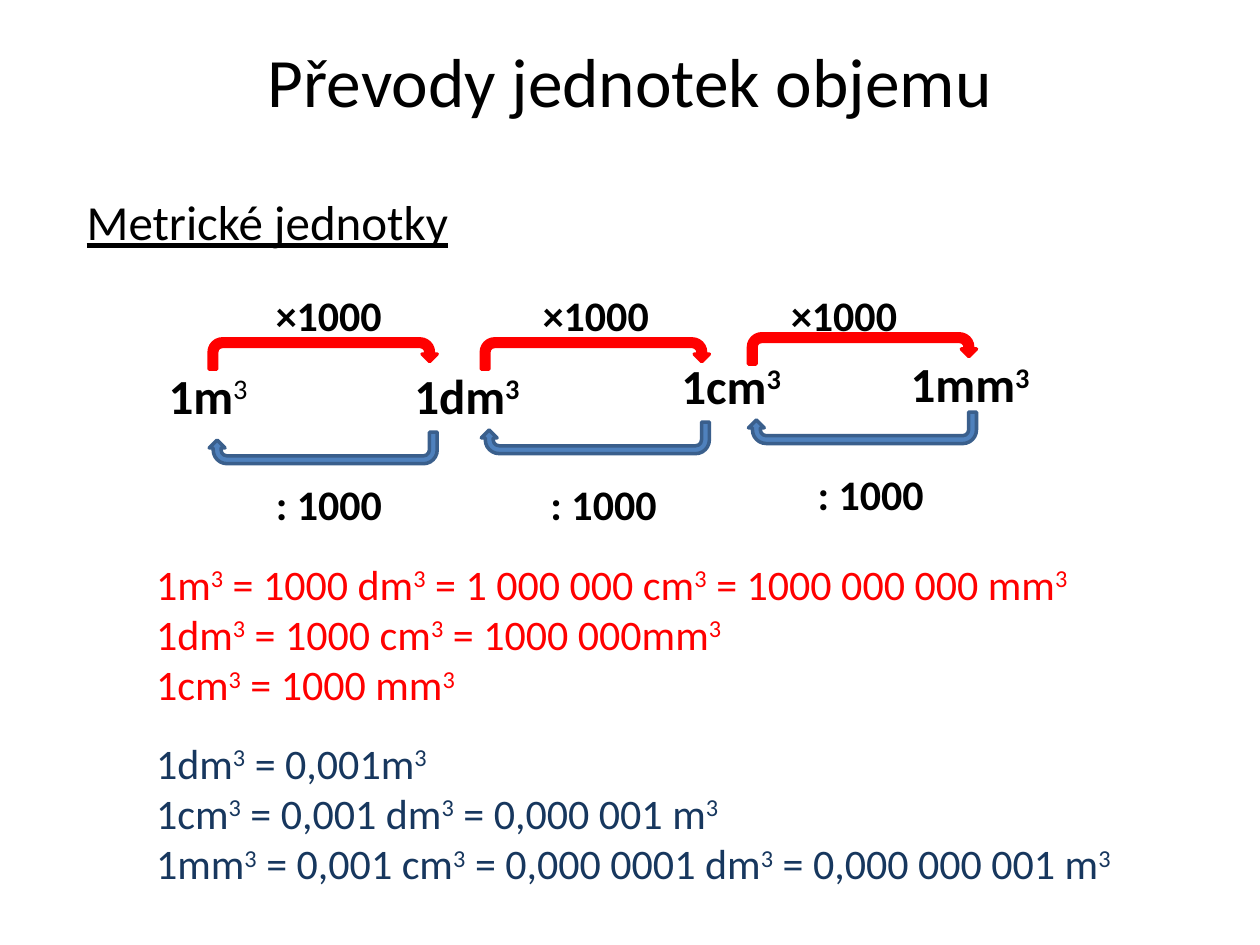
from pptx import Presentation
from pptx.dml.color import RGBColor
from pptx.enum.shapes import MSO_SHAPE as Shape
from pptx.enum.text import MSO_ANCHOR as Anchor, PP_ALIGN as Align
from pptx.util import Inches, Pt

COLORS = {
    "black": "000000",
    "red": "FF0000",
    "blue": "4F81BD",
    "blue_edge": "3A5F8C",
    "navy": "17375E",
}

# Unit, left, top, bold exponent
UNITS = [
    ("1m^3", 1.24, 2.85, 0.85, False),
    ("1dm^3", 3.19, 2.85, 1.06, True),
    ("1cm^3", 5.31, 2.77, 1.02, True),
    ("1mm^3", 7.13, 2.76, 1.16, True),
]

# Each step between neighbouring units: arrow left, then
# top of the upper arrow, top of the lower arrow,
# left of the "×" label, left and top of the ":" label
STEPS = [
    (1.66, 2.69, 3.43, 2.09, 2.09, 3.75),
    (3.82, 2.69, 3.35, 4.21, 4.27, 3.75),
    (5.94, 2.65, 3.27, 6.18, 6.39, 3.67),
]

TO_SMALLER = [
    "1m^3 = 1000 dm^3 = 1 000 000 cm^3 = 1000 000 000 mm^3",
    "1dm^3 = 1000 cm^3 = 1000 000mm^3",
    "1cm^3 = 1000 mm^3",
]
TO_LARGER = [
    "1dm^3 = 0,001m^3",
    "1cm^3 = 0,001 dm^3 = 0,000 001 m^3",
    "1mm^3 = 0,001 cm^3 = 0,000 0001 dm^3 = 0,000 000 001 m^3",
]


def rgb(name):
    return RGBColor.from_string(COLORS[name])


def write(frame, lines, size=24, color="black", bold=False,
          exponent_bold=None, underline=False, align=Align.LEFT):
    """Fill a text frame; the digit after each ^ is set as an exponent."""
    for number, line in enumerate(lines):
        paragraph = frame.paragraphs[0] if number == 0 else frame.add_paragraph()
        paragraph.alignment = align
        base, *rest = line.split("^")
        pieces = [(base, False)]
        for part in rest:
            pieces += [(part[0], True), (part[1:], False)]
        for text, raised in pieces:
            if not text:
                continue
            run = paragraph.add_run()
            run.text = text
            font = run.font
            font.name, font.size = "Calibri", Pt(size)
            font.color.rgb = rgb(color)
            font.underline = underline
            font.bold = bold
            if raised:
                run._r.get_or_add_rPr().set("baseline", "30000")
                if exponent_bold is not None:
                    font.bold = exponent_bold


def add_text(slide, lines, left, top, width, height, **text_format):
    box = slide.shapes.add_textbox(
        Inches(left), Inches(top), Inches(width), Inches(height))
    box.text_frame.word_wrap = False
    write(box.text_frame, lines, **text_format)


def add_turn_arrow(slide, left, top, height, fill, edge, rotation=0):
    arrow = slide.shapes.add_shape(
        Shape.U_TURN_ARROW, Inches(left), Inches(top), Inches(1.81), Inches(height))
    arrow.rotation = rotation
    arrow.shadow.inherit = False
    arrow.fill.solid()
    arrow.fill.fore_color.rgb = rgb(fill)
    arrow.line.color.rgb = rgb(edge)
    arrow.line.width = Pt(2)


def add_title(slide, text):
    title = slide.shapes.title
    title.left, title.top = Inches(0.5), Inches(0.3)
    title.width, title.height = Inches(9), Inches(1.25)
    title.text_frame.vertical_anchor = Anchor.TOP
    title.text_frame.margin_top = 0
    write(title.text_frame, [text], size=39.6, align=Align.CENTER)


def main():
    deck = Presentation()
    deck.slide_width, deck.slide_height = Inches(10), Inches(7.5)
    slide = deck.slides.add_slide(deck.slide_layouts[5])

    # Headings
    add_title(slide, "Převody jednotek objemu")
    add_text(slide, ["Metrické jednotky"], 0.59, 1.47, 3.1, 0.57,
             size=28, underline=True)

    # Row of units
    for unit, left, top, width, exponent_bold in UNITS:
        add_text(slide, [unit], left, top, width, 0.88,
                 size=28, bold=True, exponent_bold=exponent_bold)

    # Conversion arrows with their factors
    for left, upper, lower, times_left, over_left, over_top in STEPS:
        add_turn_arrow(slide, left, lower, 0.25, "blue", "blue_edge", rotation=180)
        add_text(slide, ["×1000"], times_left, 2.25, 1.05, 0.5, bold=True)
        add_turn_arrow(slide, left, upper, 0.24, "red", "red")
        add_text(slide, [": 1000"], over_left, over_top, 1.05, 0.5, bold=True)

    # Equations
    add_text(slide, TO_SMALLER, 1.14, 4.38, 7.54, 1.62, color="red")
    add_text(slide, TO_LARGER, 1.14, 5.8, 7.89, 1.62, color="navy")

    deck.save("out.pptx")


if __name__ == "__main__":
    main()
